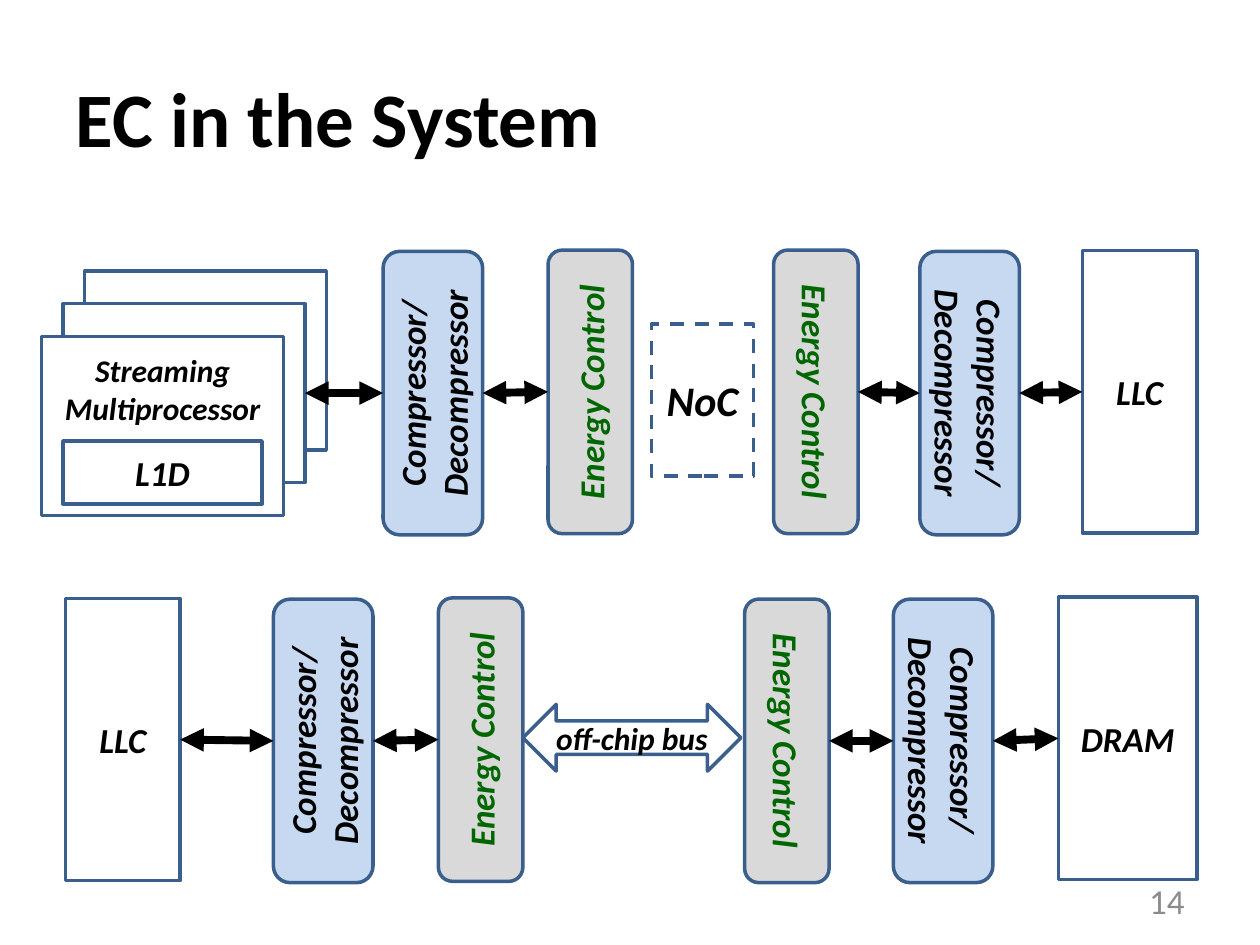
from dataclasses import dataclass

from lxml import etree
from pptx import Presentation
from pptx.dml.color import RGBColor
from pptx.enum import dml, shapes, text
from pptx.oxml import ns
from pptx.util import Inches, Pt

BLACK = RGBColor(0x00, 0x00, 0x00)
WHITE = RGBColor(0xFF, 0xFF, 0xFF)
OUTLINE = RGBColor(0x3A, 0x5F, 0x8C)
LIGHT_BLUE = RGBColor(0xC6, 0xD9, 0xF1)
LIGHT_GREY = RGBColor(0xD9, 0xD9, 0xD9)
GREEN = RGBColor(0x00, 0x66, 0x00)
PAGE_GREY = RGBColor(0x8C, 0x8C, 0x8C)

RECT = shapes.MSO_SHAPE.RECTANGLE
ROUNDED = shapes.MSO_SHAPE.ROUNDED_RECTANGLE
BUS_ARROW = shapes.MSO_SHAPE.LEFT_RIGHT_ARROW

# Connection sites on the visible (left, right) sides, by rotation
SIDE_SITES = {0: (1, 3), 90: (2, 0), 270: (0, 2)}


@dataclass
class Block:
    """A box given by its visible frame, after any rotation."""
    left: float
    top: float
    width: float
    height: float
    label: str = ""
    fill: RGBColor | None = WHITE
    size: int = 20
    color: RGBColor = BLACK
    rotation: int = 0
    preset: shapes.MSO_SHAPE = RECT
    dashed: bool = False

    @property
    def middle(self) -> float:
        return self.top + self.height / 2


def compressor(left: float, middle: float, rotation: int) -> Block:
    return Block(left, middle - 1.125, 0.79, 2.25, "Compressor/\nDecompressor",
                 LIGHT_BLUE, rotation=rotation, preset=ROUNDED)


def energy_control(left: float, middle: float, rotation: int) -> Block:
    return Block(left, middle - 1.125, 0.67, 2.25, "Energy Control",
                 LIGHT_GREY, color=GREEN, rotation=rotation, preset=ROUNDED)


def format_text(frame, size: int, color: RGBColor, align, bold=True, italic=True) -> None:
    frame.word_wrap = True
    for paragraph in frame.paragraphs:
        paragraph.alignment = align
        for run in paragraph.runs:
            font = run.font
            font.name, font.size = "Calibri", Pt(size)
            font.bold, font.italic = bold, italic
            font.color.rgb = color


def draw_block(slide, block: Block):
    width, height = block.width, block.height
    if block.rotation:
        width, height = height, width
    center = block.left + block.width / 2
    shape = slide.shapes.add_shape(
        block.preset, Inches(center - width / 2), Inches(block.middle - height / 2),
        Inches(width), Inches(height))
    shape.rotation = block.rotation
    shape.shadow.inherit = False
    if block.fill is None:
        shape.fill.background()
    else:
        shape.fill.solid()
        shape.fill.fore_color.rgb = block.fill
    shape.line.color.rgb = OUTLINE
    shape.line.width = Pt(2)
    if block.dashed:
        shape.line.dash_style = dml.MSO_LINE.DASH
    if block.label:
        frame = shape.text_frame
        frame.text = block.label
        frame.vertical_anchor = text.MSO_ANCHOR.MIDDLE
        if block.preset == BUS_ARROW:
            frame.margin_left = frame.margin_right = 0
        format_text(frame, block.size, block.color, text.PP_ALIGN.CENTER)
    return shape


def link(slide, first: Block, first_shape, second: Block, second_shape) -> None:
    """Join the right side of first to the left side of second."""
    start = Inches(first.left + first.width), Inches(first.middle)
    end = Inches(second.left), Inches(second.middle)
    arrow = slide.shapes.add_connector(shapes.MSO_CONNECTOR.STRAIGHT, *start, *end)
    arrow.begin_connect(first_shape, SIDE_SITES[first.rotation][1])
    arrow.end_connect(second_shape, SIDE_SITES[second.rotation][0])
    # Joining ignores rotation, so the ends are placed again
    arrow.begin_x, arrow.begin_y = start
    arrow.end_x, arrow.end_y = end
    arrow.line.color.rgb = BLACK
    arrow.line.width = Pt(4.5)
    line = arrow.line._get_or_add_ln()
    for tag in ("a:headEnd", "a:tailEnd"):
        etree.SubElement(line, ns.qn(tag), type="triangle")
    etree.SubElement(arrow._element.spPr, ns.qn("a:effectLst"))


def add_label(slide, words: str, left, top, width, height):
    box = slide.shapes.add_textbox(Inches(left), Inches(top), Inches(width), Inches(height))
    box.text_frame.text = words
    return box.text_frame


def main() -> None:
    prs = Presentation()
    prs.slide_width, prs.slide_height = Inches(10), Inches(7.5)
    slide = prs.slides.add_slide(prs.slide_layouts[5])

    title = slide.shapes.title
    title.left, title.top = Inches(0.5), Inches(0.3)
    title.width, title.height = Inches(9), Inches(1.25)
    title.text_frame.text = "EC in the System"
    title.text_frame.vertical_anchor = text.MSO_ANCHOR.MIDDLE
    format_text(title.text_frame, 44, BLACK, text.PP_ALIGN.LEFT, italic=False)

    page = add_label(slide, "14", 7.17, 6.95, 2.33, 0.4)
    page.vertical_anchor = text.MSO_ANCHOR.MIDDLE
    format_text(page, 20, PAGE_GREY, text.PP_ALIGN.RIGHT, bold=False, italic=False)

    back, middle_sheet, front = [
        Block(0.67 - 0.17 * i, 2.15 + 0.26 * i, 1.92, 1.42) for i in range(3)]
    l1_cache = Block(0.5, 3.5, 1.58, 0.5, "L1D", None)
    noc = Block(5.17, 2.57, 0.81, 1.21, "NoC", size=24, dashed=True)
    bus = Block(4.15, 5.59, 1.73, 0.53, "off-chip bus", None, 18, preset=BUS_ARROW)

    draw_block(slide, back)
    multiprocessor = draw_block(slide, middle_sheet)
    for block in (front, l1_cache, noc, bus):
        draw_block(slide, block)
    streaming = add_label(slide, "Streaming Multiprocessor", 0.33, 2.74, 1.92, 1.01)
    format_text(streaming, 18, BLACK, text.PP_ALIGN.CENTER)

    upper, lower = 3.12, 5.88
    # Each chain of blocks is linked from left to right
    chains = [
        [compressor(3.04, upper, 270), energy_control(4.35, upper - 0.01, 270)],
        [energy_control(6.14, upper - 0.01, 90), compressor(7.3, upper, 90),
         Block(8.59, 1.99, 0.91, 2.24, "LLC")],
        [Block(0.52, 4.75, 0.91, 2.24, "LLC"),
         compressor(2.17, lower, 270), energy_control(3.48, lower - 0.01, 270)],
        [energy_control(5.91, lower, 90), compressor(7.09, lower, 90),
         Block(8.4, 4.74, 1.1, 2.24, "DRAM")],
    ]
    drawn = [[(block, draw_block(slide, block)) for block in chain] for chain in chains]
    drawn[0].insert(0, (middle_sheet, multiprocessor))
    for chain in drawn:
        for first, second in zip(chain, chain[1:]):
            link(slide, *first, *second)

    prs.save("out.pptx")


if __name__ == "__main__":
    main()
